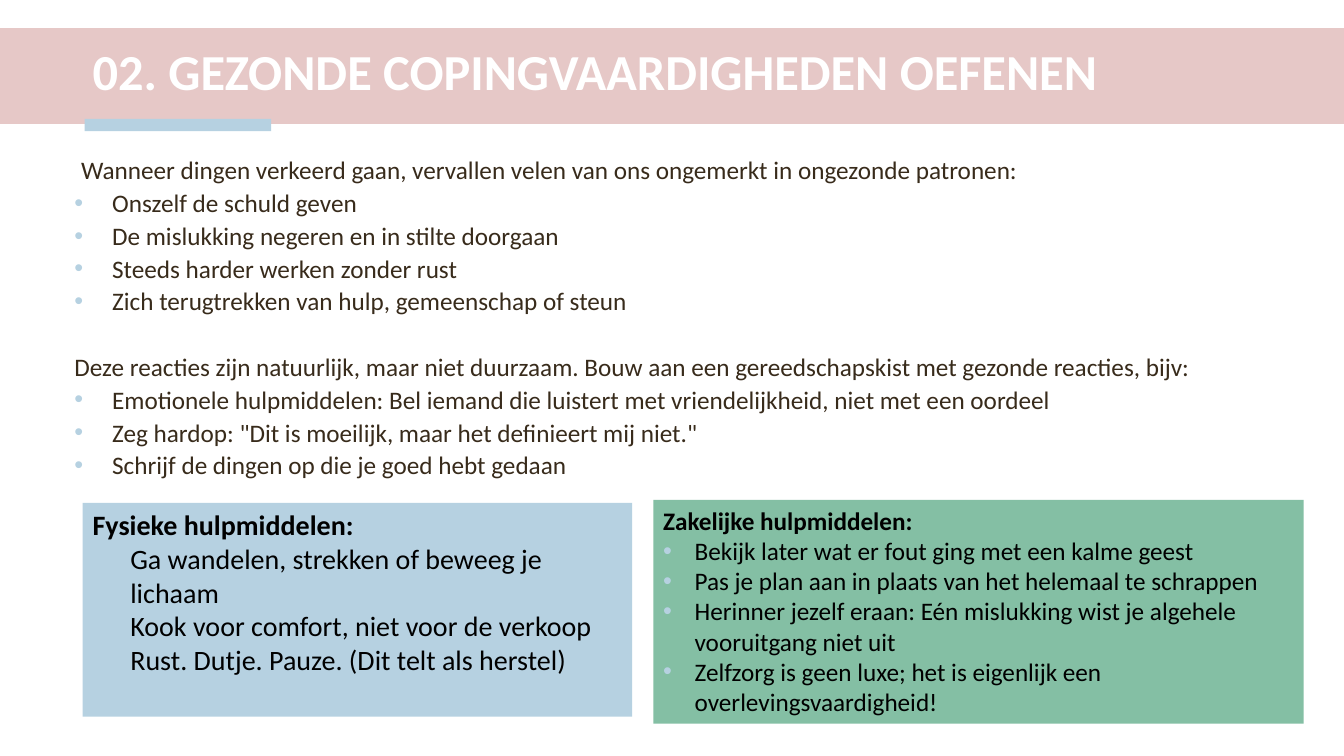
"""Build the Dutch slide on practising healthy coping skills."""
from lxml.etree import SubElement
from pptx import Presentation
from pptx.dml.color import RGBColor
from pptx.enum.shapes import MSO_SHAPE
from pptx.enum.text import MSO_ANCHOR, MSO_AUTO_SIZE, PP_ALIGN
from pptx.oxml.ns import qn
from pptx.util import Inches, Pt

COLORS = {
    "band": "E6C8C7",
    "blue": "B6D1E1",
    "green": "84BFA4",
    "title": "FFFFFF",
    "body": "382B1B",
    "card": "000000",
}

deck = Presentation()
deck.slide_width, deck.slide_height = Inches(13.33), Inches(7.5)
page = deck.slides.add_slide(deck.slide_layouts[6])
column, row = deck.slide_width / 100, deck.slide_height / 100


def add_box(left, top, width, height, fill=None):
    place = (int(left * column), int(top * row), int(width * column), int(height * row))
    if fill is None:
        box = page.shapes.add_textbox(*place)
    else:
        box = page.shapes.add_shape(MSO_SHAPE.RECTANGLE, *place)
        box.shadow.inherit = False
        box.fill.solid()
        box.fill.fore_color.rgb = RGBColor.from_string(COLORS[fill])
        box.line.fill.background()
    box.text_frame.word_wrap = True
    box.text_frame.vertical_anchor = MSO_ANCHOR.TOP
    return box


def write(box, heading, bullets, size, color, bold=False, indent=0.0):
    frame = box.text_frame
    for position, text in enumerate([heading, *bullets]):
        fresh = position == 0 and not frame.text
        para = frame.paragraphs[0] if fresh else frame.add_paragraph()
        para.text = text
        para.alignment = PP_ALIGN.LEFT
        span = para.runs[0]
        span.font.name = "Calibri"
        span.font.size = Pt(size)
        span.font.bold = bold and position == 0
        span.font.color.rgb = RGBColor.from_string(COLORS[color])
        if position:
            settings = para._p.get_or_add_pPr()
            settings.set("marL", str(int(indent * column)))
            settings.set("indent", str(-int(indent * column)))
            tint = SubElement(settings, qn("a:buClr"))
            SubElement(tint, qn("a:srgbClr"), val=COLORS["blue"])
            SubElement(settings, qn("a:buFont"), typeface="Arial")
            SubElement(settings, qn("a:buChar"), char="•")


add_box(0, 3.73, 100, 12.67, "band")
add_box(6.3, 15.73, 13.88, 1.6, "blue")

title = add_box(6.15, 4.53, 89.5, 10.53)
title.text_frame.vertical_anchor = MSO_ANCHOR.MIDDLE
write(title, "02. GEZONDE COPINGVAARDIGHEDEN OEFENEN", [], 36, "title", bold=True)
title.text_frame.paragraphs[0].line_spacing = 0.9
title.text_frame.paragraphs[0].space_before = Pt(10)

SECTIONS = [
    ("Wanneer dingen verkeerd gaan, vervallen velen van ons ongemerkt in ongezonde patronen:", [
        "Onszelf de schuld geven",
        "De mislukking negeren en in stilte doorgaan",
        "Steeds harder werken zonder rust",
        "Zich terugtrekken van hulp, gemeenschap of steun",
    ]),
    ("Deze reacties zijn natuurlijk, maar niet duurzaam. Bouw aan een gereedschapskist met gezonde reacties, bijv:", [
        "Emotionele hulpmiddelen: Bel iemand die luistert met vriendelijkheid, niet met een oordeel",
        "Zeg hardop: \"Dit is moeilijk, maar het definieert mij niet.\"",
        "Schrijf de dingen op die je goed hebt gedaan",
    ]),
]
body = add_box(4.8, 19.47, 93.25, 61.07)
for heading, bullets in SECTIONS:
    write(body, heading, bullets, 18, "body", indent=2.81)
for para in body.text_frame.paragraphs:
    para.line_spacing = Pt(23.4)
    if para.text == SECTIONS[1][0]:
        para.space_before = Pt(23.4)
opening = body.text_frame.paragraphs[0]._p.get_or_add_pPr()
opening.set("indent", str(int(0.5 * column)))

CARDS = [
    ((6.15, 66.53, 40.89, 28.27, "blue"), 20, 2.81, "Fysieke hulpmiddelen:", [
        "Ga wandelen, strekken of beweeg je lichaam",
        "Kook voor comfort, niet voor de verkoop",
        "Rust. Dutje. Pauze. (Dit telt als herstel)",
    ]),
    ((48.61, 66.13, 48.39, 29.6, "green"), 18, 2.34, "Zakelijke hulpmiddelen:", [
        "Bekijk later wat er fout ging met een kalme geest",
        "Pas je plan aan in plaats van het helemaal te schrappen",
        "Herinner jezelf eraan: Eén mislukking wist je algehele vooruitgang niet uit",
        "Zelfzorg is geen luxe; het is eigenlijk een overlevingsvaardigheid!",
    ]),
]
for place, size, indent, heading, bullets in CARDS:
    card = add_box(*place)
    card.text_frame.auto_size = MSO_AUTO_SIZE.SHAPE_TO_FIT_TEXT
    write(card, heading, bullets, size, "card", bold=True, indent=indent)

deck.save("out.pptx")
